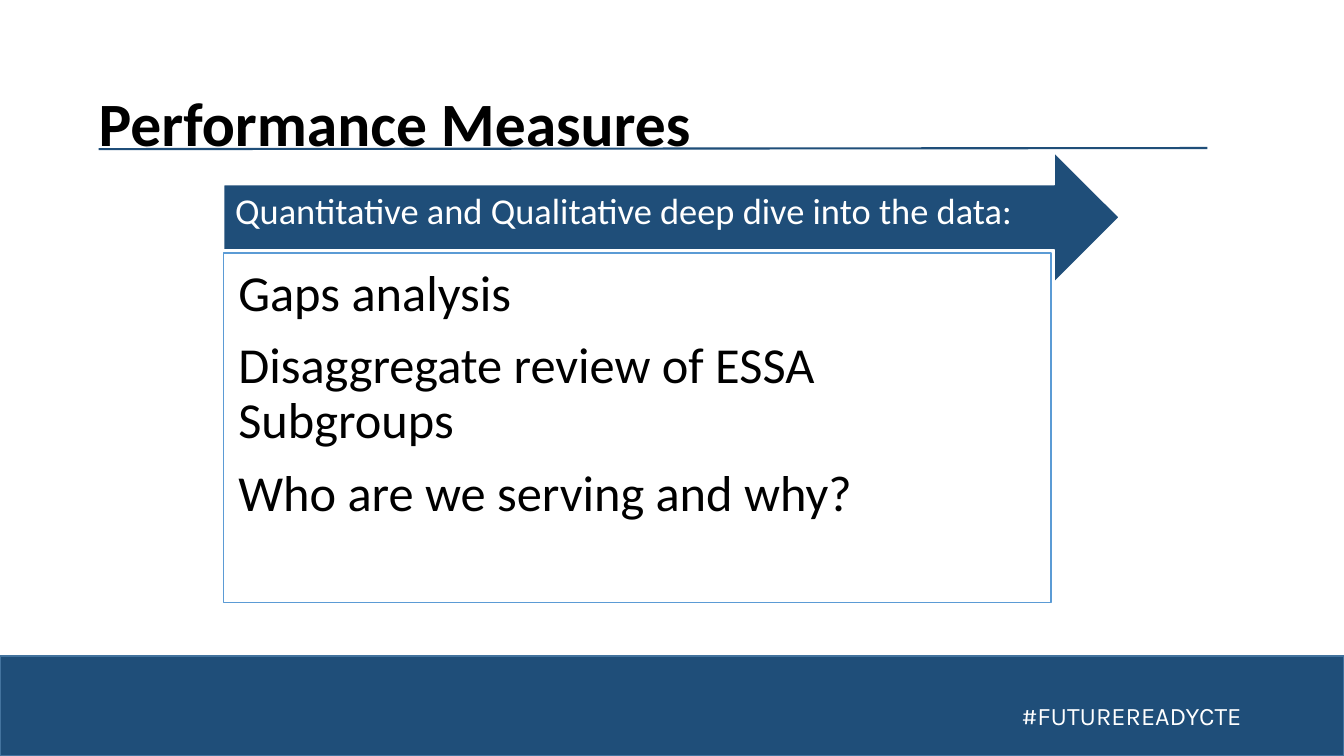
"""Build the Performance Measures slide."""
from lxml import etree
from pptx import Presentation
from pptx.dml.color import RGBColor
from pptx.enum.shapes import MSO_CONNECTOR, MSO_SHAPE
from pptx.enum.text import MSO_ANCHOR, MSO_AUTO_SIZE, PP_ALIGN
from pptx.oxml.ns import qn
from pptx.util import Pt

PX = 9525
NAVY = RGBColor(0x1F, 0x4E, 0x79)
BAND_EDGE = RGBColor(0x43, 0x73, 0x9E)
BOX_EDGE = RGBColor(0x5B, 0x9B, 0xD5)
WHITE = RGBColor(0xFF, 0xFF, 0xFF)
BLACK = RGBColor(0, 0, 0)
RECTANGLE, RIGHT_ARROW = MSO_SHAPE.RECTANGLE, MSO_SHAPE.RIGHT_ARROW
STRAIGHT = MSO_CONNECTOR.STRAIGHT
TOP, MIDDLE = MSO_ANCHOR.TOP, MSO_ANCHOR.MIDDLE
LEFT = PP_ALIGN.LEFT
NO_FIT = MSO_AUTO_SIZE.NONE
MEASURES = [
    "Gaps analysis",
    "Disaggregate review of ESSA Subgroups",
    "Who are we serving and why?",
]


def paint(shape, fill, edge):
    shape.fill.solid()
    shape.fill.fore_color.rgb = fill
    shape.line.color.rgb = edge
    shape.line.width = Pt(1)


def set_text(shape, lines, font, size, color, anchor, insets, wrap=True, bold=False):
    frame = shape.text_frame
    frame.text = "\n".join(lines)
    frame.auto_size = NO_FIT
    frame.word_wrap = wrap
    frame.vertical_anchor = anchor
    (frame.margin_left, frame.margin_top,
     frame.margin_right, frame.margin_bottom) = [inset * PX for inset in insets]
    for para in frame.paragraphs:
        para.alignment = LEFT
        para.space_before = Pt(0)
        para.font.name = font
        para.font.size = Pt(size)
        para.font.bold = bold
        para.font.color.rgb = color


deck = Presentation()
deck.slide_width, deck.slide_height = 1280 * PX, 720 * PX
page = deck.slides.add_slide(deck.slide_layouts[1])
shapes = page.shapes

band = shapes.add_shape(RECTANGLE, 0, 625 * PX, 1280 * PX, 95 * PX)
band.shadow.inherit = False
paint(band, NAVY, BAND_EDGE)

hashtag = shapes.add_textbox(963 * PX, 662 * PX, 229 * PX, 38 * PX)
set_text(hashtag, ["#FUTUREREADYCTE"], "Karla", 18, WHITE, TOP, (10, 5, 10, 5), wrap=False)

title = shapes.title
title.left, title.top, title.width, title.height = 94 * PX, 81 * PX, 1133 * PX, 71 * PX
set_text(title, ["Performance Measures"], "Calibri", 44, BLACK, MIDDLE, (0, 0, 0, 0), bold=True)

rule = shapes.add_connector(STRAIGHT, 94 * PX, 142 * PX, 1150 * PX, 141 * PX)
rule.line.color.rgb = NAVY
rule.line.width = Pt(1.5)
etree.SubElement(rule.element.spPr, qn("a:effectLst"))

arrow = shapes.add_shape(RIGHT_ARROW, 213 * PX, 145 * PX, 853 * PX, 124 * PX)
arrow.shadow.inherit = False
paint(arrow, NAVY, WHITE)
set_text(arrow, ["Quantitative and Qualitative deep dive into the data:"],
         "Calibri", 26, WHITE, MIDDLE, (11, 11, 27, 20))
arrow.text_frame.paragraphs[0].line_spacing = 0.9

measures = page.placeholders[1]
measures.left, measures.top, measures.width, measures.height = 213 * PX, 241 * PX, 788 * PX, 333 * PX
paint(measures, WHITE, BOX_EDGE)
measures.text_frame.text = "\n".join(MEASURES)
set_text(measures, MEASURES, "Calibri", 36, BLACK, TOP, (14, 14, 14, 14))
for para in measures.text_frame.paragraphs:
    para.line_spacing = 0.9
    para.space_after = Pt(13)
    properties = para._p.get_or_add_pPr()
    properties.set("marL", "0")
    properties.set("indent", "0")
    bullet = etree.Element(qn("a:buNone"))
    properties.find(qn("a:defRPr")).addprevious(bullet)

deck.save("out.pptx")
